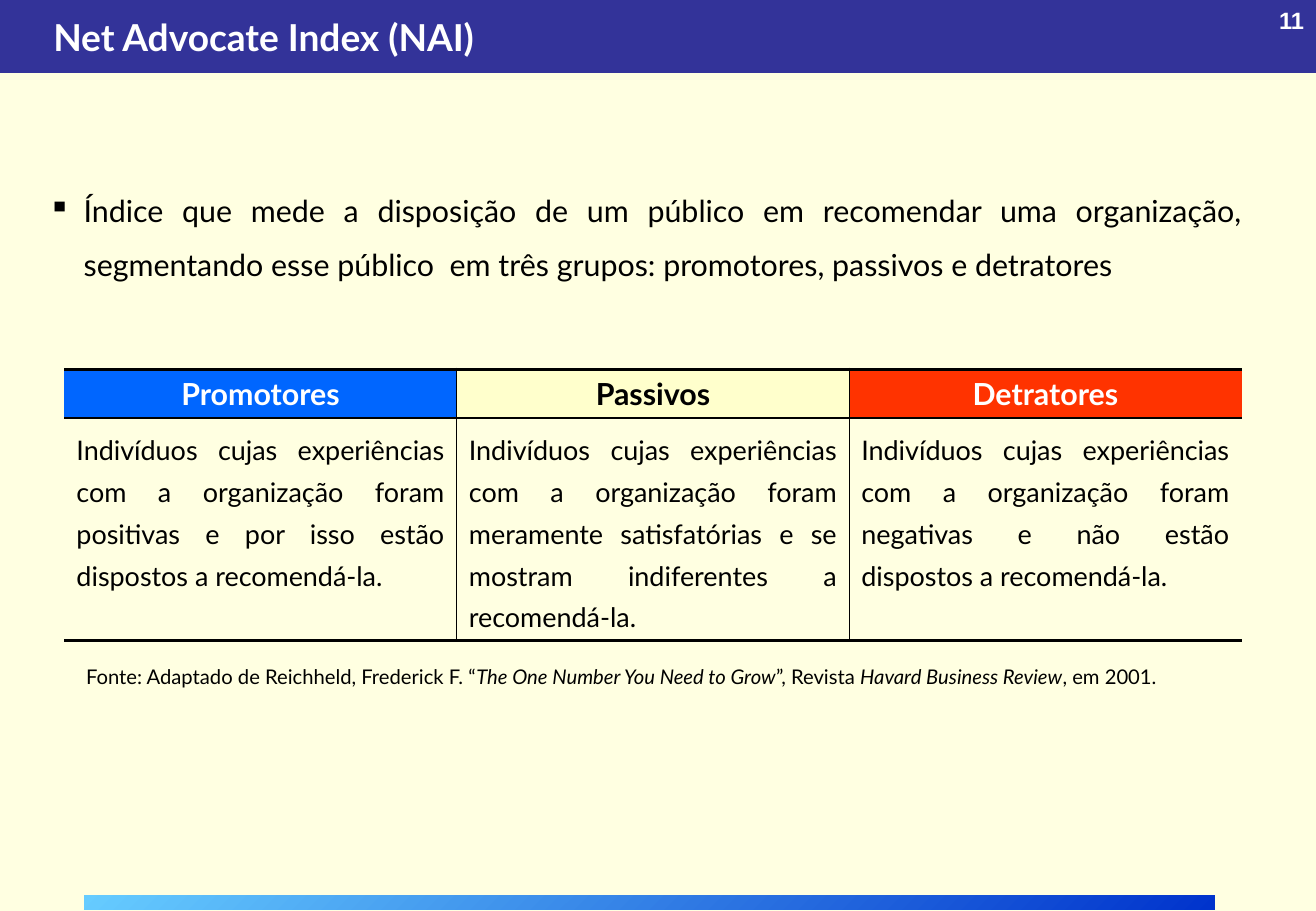
from lxml import etree
from pptx import Presentation
from pptx import util as u
from pptx.dml.color import RGBColor
from pptx.enum import shapes, text
from pptx.oxml.ns import qn

# Content
TITLE = "Net Advocate Index (NAI)"
PAGE_NUMBER = "11"
INTRO = ("Índice que mede a disposição de um público em recomendar uma organização, "
         "segmentando esse público  em três grupos: promotores, passivos e detratores")
SHARED = "Indivíduos cujas experiências com a organização foram "
GROUPS = [  # heading, fill, heading colour, description
    ("Promotores", "0066FF", "FFFFFF",
     SHARED + "positivas e por isso estão dispostos a recomendá-la."),
    ("Passivos", "FFFFCC", "000000",
     SHARED + "meramente satisfatórias e se mostram indiferentes a recomendá-la."),
    ("Detratores", "FF3300", "FFFFFF",
     SHARED + "negativas e não estão dispostos a recomendá-la."),
]
SOURCE = [  # text, italic
    ("Fonte: Adaptado de Reichheld, Frederick F. “", False),
    ("The One Number You Need to Grow", True),
    ("”, Revista ", False),
    ("Havard Business Review", True),
    (", em 2001.", False),
]

# Places: left, top, width, height as percent of the slide
PLACES = {
    "band": (0, 0, 100, 8),
    "footer": (6.37, 98.27, 85.96, 1.6),
    "number": (95.38, 0, 4.62, 5.2),
    "title": (3.14, 0.67, 51.4, 6.8),
    "intro": (2.77, 18.4, 92.52, 12.67),
    "table": (4.89, 40.53, 89.47, 29.8),
    "source": (5.63, 70.93, 89.47, 4.8),
}
HEADER_SHARE = 0.18
THIN, THICK = 1, 2.25
ALIGN = text.PP_ALIGN

deck = Presentation()
deck.slide_width, deck.slide_height = u.Inches(10.83), u.Inches(7.5)
page = deck.slides.add_slide(deck.slide_layouts[6])


def color(code):
    return RGBColor.from_string(code)


def place(name):
    left, top, width, height = PLACES[name]
    return [round(share * side / 100) for share, side in (
        (left, deck.slide_width), (top, deck.slide_height),
        (width, deck.slide_width), (height, deck.slide_height))]


def write(frame, spans, size=18, font="Lato", ink="000000", bold=False,
          align=ALIGN.LEFT, spacing=1.0, bullet=None):
    """Fill the frame with one paragraph of (text, italic) spans."""
    frame.word_wrap = True
    para = frame.paragraphs[0]
    para.alignment, para.line_spacing = align, spacing
    if bullet:
        props = para._p.get_or_add_pPr()
        indent = u.Inches(0.29)
        props.set("marL", str(indent))
        props.set("indent", str(-indent))
        etree.SubElement(props, qn("a:buChar"), char=bullet)
    for words, italic in [(spans, False)] if isinstance(spans, str) else spans:
        span = para.add_run()
        span.text = words
        span.font.name, span.font.size = font, u.Pt(size)
        span.font.bold, span.font.italic = bold, italic
        span.font.color.rgb = color(ink)


def add_text(name, spans, anchor=text.MSO_ANCHOR.TOP, **style):
    box = page.shapes.add_textbox(*place(name))
    box.text_frame.vertical_anchor = anchor
    write(box.text_frame, spans, **style)


def add_bar(name):
    bar = page.shapes.add_shape(shapes.MSO_SHAPE.RECTANGLE, *place(name))
    bar.shadow.inherit = False
    bar.line.fill.background()
    return bar


def set_borders(cell, **widths):
    """Draw the four cell edges in black; a width of 0 leaves an edge bare."""
    props = cell._tc.get_or_add_tcPr()
    for side in "LRTB":
        width = widths[side]
        line = etree.SubElement(props, qn("a:ln" + side), w=str(u.Pt(width)))
        if width:
            fill = etree.SubElement(line, qn("a:solidFill"))
            etree.SubElement(fill, qn("a:srgbClr"), val="000000")
        else:
            etree.SubElement(line, qn("a:noFill"))


# Background, title band and footer bar
page.background.fill.solid()
page.background.fill.fore_color.rgb = color("FFFFE1")
band = add_bar("band")
band.fill.solid()
band.fill.fore_color.rgb = color("333399")
footer = add_bar("footer")
footer.fill.gradient()
footer.fill.gradient_angle = 315
for stop, code in zip(footer.fill.gradient_stops, ("66CCFF", "0033CC")):
    stop.color.rgb = color(code)

# Texts
add_text("number", PAGE_NUMBER, size=14, font="Arial", ink="FFFFFF", bold=True,
         align=ALIGN.RIGHT)
add_text("title", TITLE, size=22, ink="FFFFFF", bold=True,
         anchor=text.MSO_ANCHOR.MIDDLE)
add_text("intro", INTRO, align=ALIGN.JUSTIFY, spacing=1.5, bullet="▪")

# Table of the three groups
left, top, width, height = place("table")
table = page.shapes.add_table(2, len(GROUPS), left, top, width, height).table
table.first_row = table.horz_banding = False
table.rows[0].height = round(height * HEADER_SHARE)
table.rows[1].height = height - table.rows[0].height
for col, (heading, fill, ink, description) in enumerate(GROUPS):
    sides = {"L": THIN if col else 0, "R": THIN if col < len(GROUPS) - 1 else 0}
    head, body = table.cell(0, col), table.cell(1, col)
    set_borders(head, T=THICK, B=THIN, **sides)
    set_borders(body, T=THIN, B=THICK, **sides)
    head.fill.solid()
    head.fill.fore_color.rgb = color(fill)
    body.fill.background()
    write(head.text_frame, heading, ink=ink, bold=True, align=ALIGN.CENTER)
    write(body.text_frame, description, size=16, align=ALIGN.JUSTIFY, spacing=1.3)

# Source line
add_text("source", SOURCE, size=12, align=ALIGN.JUSTIFY, spacing=1.5)

deck.save("out.pptx")
